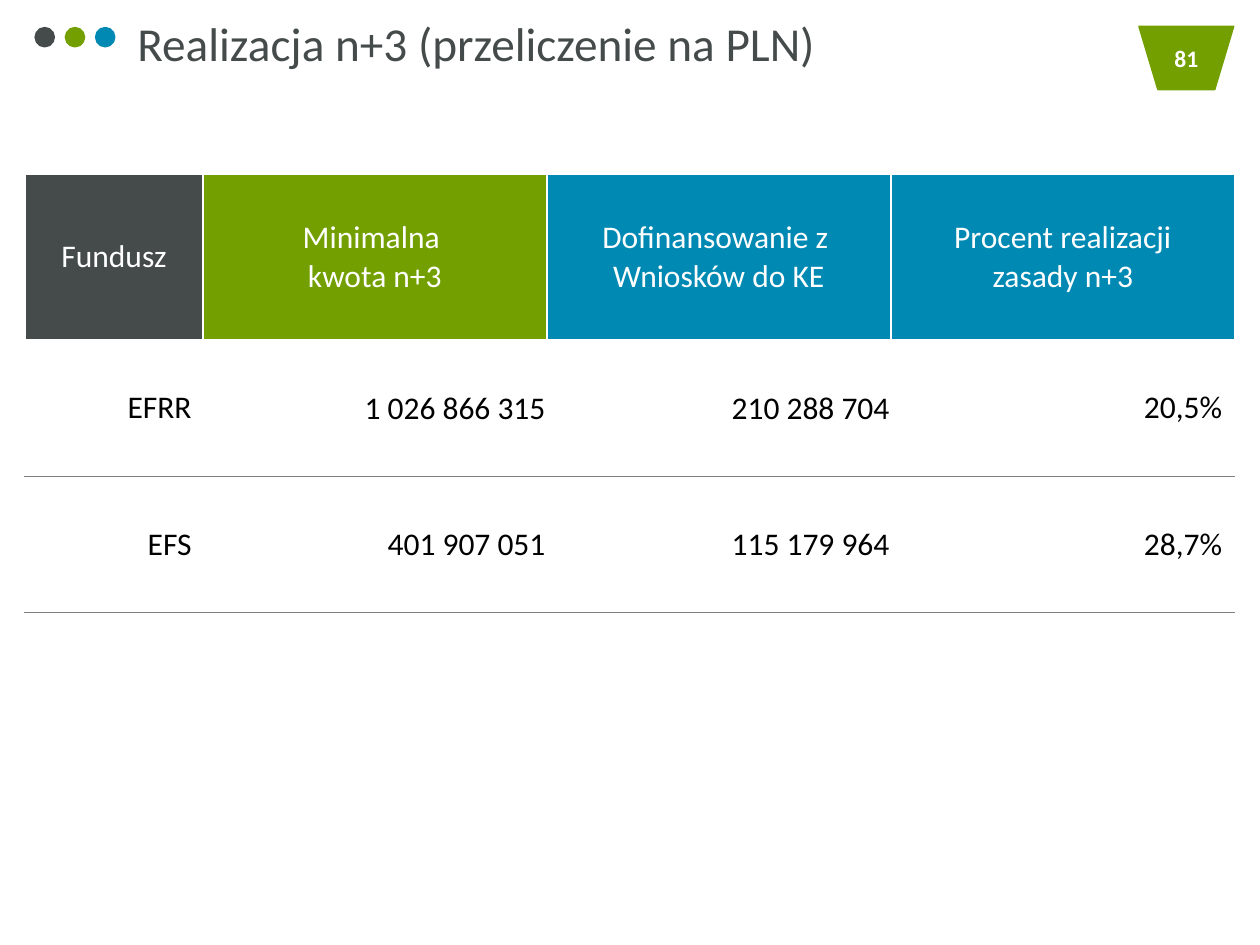
from dataclasses import dataclass

from lxml import etree
from pptx import Presentation
from pptx import util as u
from pptx.dml.color import RGBColor
from pptx.enum import shapes, text
from pptx.oxml import ns


@dataclass(frozen=True)
class Theme:
    font: str = "Calibri"
    graphite: str = "454B4B"
    green: str = "73A000"
    blue: str = "0089B3"
    white: str = "FFFFFF"
    black: str = "000000"
    rule: str = "808080"
    title_size: float = 27
    table_size: float = 18
    number_size: float = 13.5


theme = Theme()


def style(paragraph, size, color, align, bold=False):
    paragraph.alignment = align
    font = paragraph.font
    font.name, font.size, font.bold = theme.font, u.Pt(size), bold
    font.color.rgb = RGBColor.from_string(color)


def set_borders(cell, **sides):
    """Draw each side (L, R, T, B, in that order) as a (colour, points) line."""
    properties = cell._tc.get_or_add_tcPr()
    for position, (side, (color, points)) in enumerate(sides.items()):
        line = etree.Element(ns.qn(f"a:ln{side}"), w=str(u.Pt(points)))
        fill = etree.SubElement(line, ns.qn("a:solidFill"))
        etree.SubElement(fill, ns.qn("a:srgbClr"), val=color)
        properties.insert(position, line)


deck = Presentation()
deck.slide_width, deck.slide_height = u.Inches(10), u.Inches(7.5)
slide = deck.slides.add_slide(deck.slide_layouts[5])

# Page number and the three dots beside the title
dot_size, dot_step = 0.15, 0.24
ornaments = [
    (shapes.MSO_SHAPE.FLOWCHART_MANUAL_OPERATION, 9.04, 0.21, 0.75, 0.5, theme.green)
]
for index, color in enumerate((theme.graphite, theme.green, theme.blue)):
    ornaments.append((shapes.MSO_SHAPE.OVAL, 0.28 + index * dot_step, 0.22,
                      dot_size, dot_size, color))
for preset, left, top, width, height, color in ornaments:
    ornament = slide.shapes.add_shape(
        preset, *(u.Inches(n) for n in (left, top, width, height)))
    ornament.shadow.inherit = False
    ornament.fill.solid()
    ornament.fill.fore_color.rgb = RGBColor.from_string(color)
    ornament.line.color.rgb = RGBColor.from_string(color)
    ornament.line.width = u.Pt(1)
    if preset == shapes.MSO_SHAPE.FLOWCHART_MANUAL_OPERATION:
        page_number = ornament.text_frame
        page_number.text = "81"
        page_number.word_wrap = False
        page_number.vertical_anchor = text.MSO_ANCHOR.MIDDLE
        style(page_number.paragraphs[0], theme.number_size, theme.white,
              text.PP_ALIGN.CENTER, bold=True)

# Title
title = slide.shapes.title
title.left, title.top = u.Inches(1.09), u.Inches(0.11)
title.width, title.height = u.Inches(5.42), u.Inches(0.45)
heading = title.text_frame
heading.text = "Realizacja n+3 (przeliczenie na PLN)"
heading.margin_left = heading.margin_right = 0
heading.margin_top = heading.margin_bottom = 0
heading.word_wrap = False
heading.auto_size = text.MSO_AUTO_SIZE.SHAPE_TO_FIT_TEXT
heading.vertical_anchor = text.MSO_ANCHOR.TOP
style(heading.paragraphs[0], theme.title_size, theme.graphite, text.PP_ALIGN.LEFT)

# Funds table
rows = [
    ("Fundusz", "Minimalna \vkwota n+3", "Dofinansowanie z \vWniosków do KE",
     "Procent realizacji\vzasady n+3"),
    ("EFRR", "1 026 866 315", "210 288 704", "20,5%"),
    ("EFS", "401 907 051", "115 179 964", "28,7%"),
]
header_fills = (theme.graphite, theme.green, theme.blue, theme.blue)
column_widths = (1.41, 2.73, 2.73, 2.73)
row_heights = (1.32, 1.08, 1.08)
header_margins = (0, 0, 0, 0)
body_margins = ((0, 0, 0.09, 0), (0.01, 0.01, 0.01, 0), (0.01, 0.01, 0.01, 0),
                (0.1, 0.05, 0.1, 0.05))
white_line, grey_line = (theme.white, 1), (theme.rule, 0.5)

funds = slide.shapes.add_table(
    len(rows), len(column_widths), u.Inches(0.2), u.Inches(1.38),
    u.Inches(sum(column_widths)), u.Inches(sum(row_heights))).table
funds.horz_banding = False
for column, width in zip(funds.columns, column_widths):
    column.width = u.Inches(width)
for row, height in zip(funds.rows, row_heights):
    row.height = u.Inches(height)

for r, values in enumerate(rows):
    is_header = r == 0
    for c, value in enumerate(values):
        cell = funds.cell(r, c)
        cell.text = value
        cell.vertical_anchor = text.MSO_ANCHOR.MIDDLE
        margins = header_margins if is_header else body_margins[c]
        (cell.margin_left, cell.margin_top, cell.margin_right,
         cell.margin_bottom) = (u.Inches(m) for m in margins)
        if is_header:
            cell.fill.solid()
            cell.fill.fore_color.rgb = RGBColor.from_string(header_fills[c])
        else:
            cell.fill.background()
        style(cell.text_frame.paragraphs[0], theme.table_size,
              theme.white if is_header else theme.black,
              text.PP_ALIGN.CENTER if is_header else text.PP_ALIGN.RIGHT)
        set_borders(cell, L=white_line, R=white_line,
                    T=grey_line if r > 1 else white_line,
                    B=white_line if is_header else grey_line)

deck.save("out.pptx")
